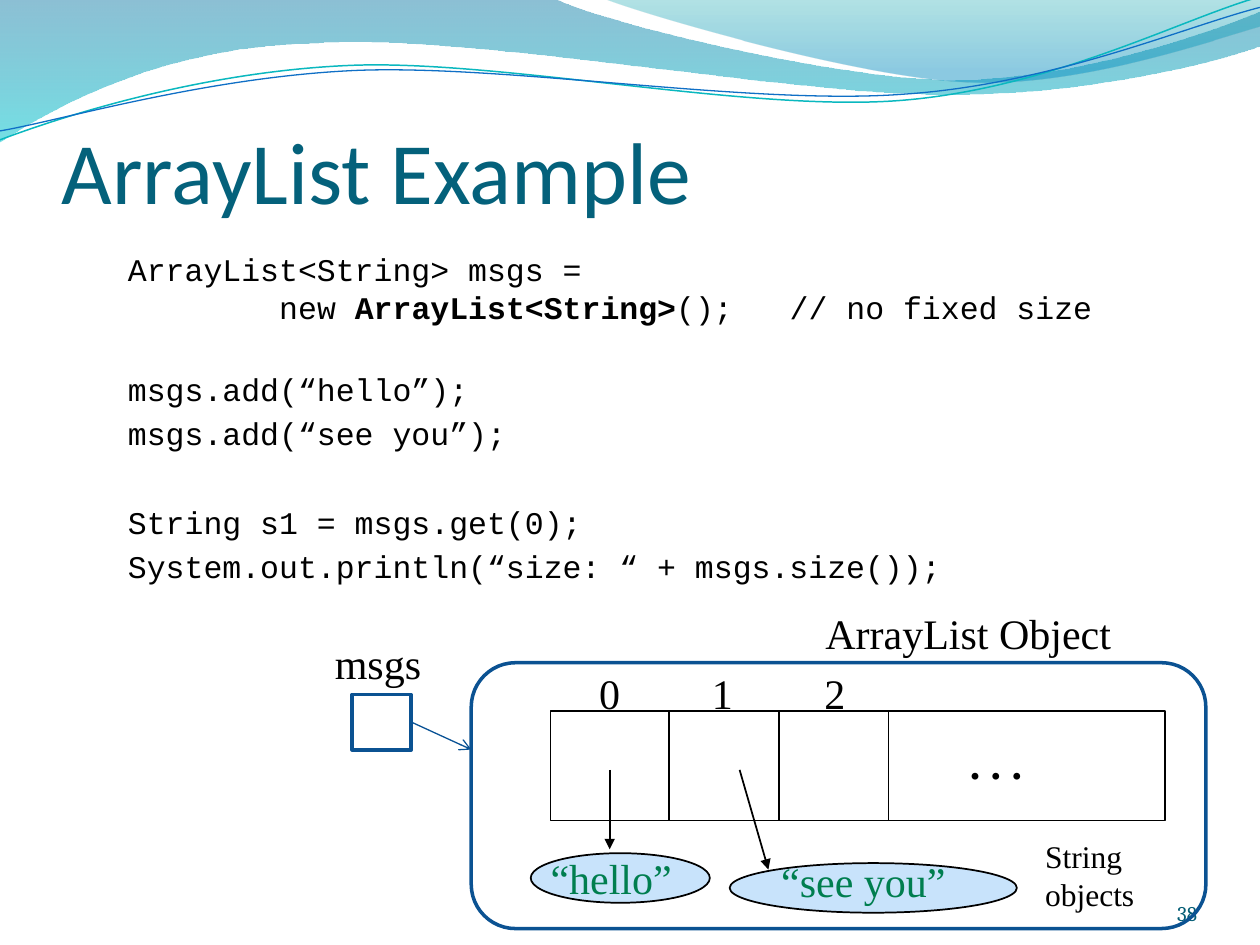
from lxml import etree
from pptx import Presentation
from pptx import util as u
from pptx.dml.color import RGBColor
from pptx.enum import shapes, text
from pptx.oxml.ns import qn

BLACK = RGBColor(0x00, 0x00, 0x00)
TITLE_TEAL = RGBColor(0x04, 0x61, 0x7B)
NUMBER_TEAL = RGBColor(0x04, 0x5D, 0x75)
STRING_GREEN = RGBColor(0x00, 0x7E, 0x4F)
OBJECT_BLUE = RGBColor(0x0B, 0x52, 0x92)
POINTER_BLUE = RGBColor(0x09, 0x52, 0x95)
OVAL_BLUE = RGBColor(0xC8, 0xE3, 0xFB)
WAVE_BLUE = RGBColor(0x00, 0x74, 0xA1)
WAVE_CYAN = RGBColor(0x00, 0xC6, 0xCF)
CREST_TEAL = RGBColor(0x00, 0xA1, 0xA9)
CREST_BLUE = RGBColor(0x00, 0x8B, 0xBF)
LINE_CYAN = RGBColor(0x0A, 0xB8, 0xBF)
LINE_BLUE = RGBColor(0x0F, 0x6F, 0xC6)

SERIF = "Times New Roman"
MONO = "Courier New"

BAND = [[(0, 0)], [(11.18, -0.03)],
        [(12.09, 0.43), (16.87, 1.6), (19.25, 1.6)],
        [(21.67, 1.6), (24.33, 0.66), (25.4, 0.23)],
        [(25.43, 0.91)],
        [(24.97, 1.12), (22.1, 1.93), (18.95, 1.9)],
        [(15.8, 1.9), (9.7, 0.71), (6.53, 0.86)],
        [(3.28, 0.91), (1.17, 2.11), (-0.03, 2.87)]]
CREST = [[(12.17, -0.03)],
         [(12.93, 0.28), (17.32, 1.57), (19.53, 1.65)],
         [(21.74, 1.75), (24.41, 0.81), (25.4, 0.53)],
         [(25.4, 0)]]
CYAN_CURVE = [[(0, 2.82)],
              [(1.22, 2.36), (4.01, 1.45), (7.04, 1.32)],
              [(10.03, 1.19), (15.06, 2.26), (18.11, 2.03)],
              [(21.16, 1.8), (23.83, 0.38), (25.35, -0.05)]]
BLUE_CURVE = [[(0, 2.64)],
              [(1.19, 2.44), (4.17, 1.55), (7.19, 1.42)],
              [(10.24, 1.3), (15.16, 2.13), (18.21, 1.9)],
              [(21.23, 1.7), (23.9, 0.53), (25.4, 0.15)]]


def bend(shape, segments):
    nodes = iter(list(shape._element.iter(qn("a:lnTo"))))
    for segment in segments:
        first, *others = [next(nodes) for _ in segment]
        if others:
            first.tag = qn("a:cubicBezTo")
        for node in others:
            first.append(node[0])
            node.getparent().remove(node)


def add_wave(slide, outline, stops=(), line=None, width=0.75):
    points = [(u.Cm(x), u.Cm(y)) for segment in outline for x, y in segment]
    builder = slide.shapes.build_freeform(*points[0])
    builder.add_line_segments(points[1:], close=bool(stops))
    shape = builder.convert_to_shape()
    bend(shape, outline[1:])
    paint(shape, None, line, width)
    if stops:
        shape.fill.gradient()
        shape.fill.gradient_angle = 270
        for stop, (position, color, _) in zip(shape.fill.gradient_stops, stops):
            stop.position = position
            stop.color.rgb = color
        for node, (_, _, opacity) in zip(shape._element.iter(qn("a:srgbClr")), stops):
            etree.SubElement(node, qn("a:alpha"), val=str(opacity * 1000))


def paint(shape, fill, line, width):
    shape.shadow.inherit = False
    if fill is None:
        shape.fill.background()
    else:
        shape.fill.solid()
        shape.fill.fore_color.rgb = fill
    if line is None:
        shape.line.fill.background()
    else:
        shape.line.color.rgb = line
        shape.line.width = u.Pt(width)


def add_box(slide, kind, box, fill=None, line=BLACK, width=1):
    shape = slide.shapes.add_shape(kind, *map(u.Cm, box))
    paint(shape, fill, line, width)


def add_line(slide, start, end, color=BLACK, width=1, arrow=None):
    connector = slide.shapes.add_connector(shapes.MSO_CONNECTOR.STRAIGHT,
                                           *map(u.Cm, (*start, *end)))
    connector.line.color.rgb = color
    connector.line.width = u.Pt(width)
    if arrow:
        outline = connector._element.spPr.find(qn("a:ln"))
        etree.SubElement(outline, qn("a:tailEnd"), type=arrow)
    etree.SubElement(connector._element.spPr, qn("a:effectLst"))


def add_text(slide, box, paragraphs, font=SERIF, size=24, color=BLACK, bold=False,
             wrap=False, align=text.PP_ALIGN.LEFT, anchor=text.MSO_ANCHOR.TOP,
             margins=(0.25, 0.13, 0.25, 0.13), before=(), leading=None, tabs=()):
    frame = slide.shapes.add_textbox(*map(u.Cm, box)).text_frame
    frame.word_wrap = wrap
    frame.vertical_anchor = anchor
    (frame.margin_left, frame.margin_top,
     frame.margin_right, frame.margin_bottom) = map(u.Cm, margins)
    for index, content in enumerate(paragraphs):
        paragraph = frame.paragraphs[0] if index == 0 else frame.add_paragraph()
        paragraph.alignment = align
        paragraph.space_before = u.Pt(before[index] if before else 0)
        if leading:
            paragraph.line_spacing = u.Pt(leading)
        if tabs:
            stops = etree.SubElement(paragraph._p.get_or_add_pPr(), qn("a:tabLst"))
            for position in tabs:
                etree.SubElement(stops, qn("a:tab"), pos=str(u.Cm(position)), algn="l")
        runs = [(content, bold)] if isinstance(content, str) else content
        for words, heavy in runs:
            if words == "\n":
                paragraph.add_line_break()
                continue
            run = paragraph.add_run()
            run.text = words
            run.font.name = font
            run.font.size = u.Pt(size)
            run.font.bold = heavy
            run.font.color.rgb = color


def add_waves(slide):
    add_wave(slide, BAND, stops=[(0, WAVE_BLUE, 45), (1, WAVE_CYAN, 55)])
    add_wave(slide, CREST, stops=[(0, CREST_TEAL, 30), (0.8, CREST_BLUE, 45)])
    add_wave(slide, CYAN_CURVE, line=LINE_CYAN, width=0.85)
    add_wave(slide, BLUE_CURVE, line=LINE_BLUE)


def add_code(slide):
    declaration = [("ArrayList<String> msgs =", False), ("\n", False), ("\tnew ", False),
                   ("ArrayList<String>", True), ("();\t// no fixed size", False)]
    lines = [declaration, "msgs.add(“hello”);", "msgs.add(“see you”);",
             "String s1 = msgs.get(0);", "System.out.println(“size: “ + msgs.size());"]
    add_text(slide, (2.33, 4.93, 21.59, 7.59), lines, font=MONO, size=18, wrap=True,
             before=(0, 25.5, 4, 29.5, 4), leading=21.3, tabs=(3.05, 13.34))


def add_array(slide):
    kinds = shapes.MSO_SHAPE
    left, top, cell, pitch = 13.49, 14.33, 2.21, 2.27
    add_box(slide, kinds.RECTANGLE, (11.1, top, 12.39, cell))
    for index in range(3):
        divider = left + index * cell
        add_line(slide, (divider, top), (divider, top + cell))
        add_text(slide, (11.83 + index * pitch, 13.33, 0.94, 1.27), [str(index)])
    add_text(slide, (19.3, 14.73, 1.57, 1.27), [". . ."], bold=True)

    add_box(slide, kinds.OVAL, (10.7, 17.2, 3.61, 1), fill=OVAL_BLUE)
    add_box(slide, kinds.OVAL, (14.71, 17.4, 5.79, 1), fill=OVAL_BLUE)
    add_text(slide, (10.85, 17.06, 2.95, 1.27), ["“hello”"], color=STRING_GREEN)
    add_text(slide, (15.5, 17.12, 4.06, 1.27), ["“see you”"], color=STRING_GREEN, wrap=True)
    add_line(slide, (12.29, 15.52), (12.29, 17.12), arrow="triangle")
    add_line(slide, (14.91, 15.52), (15.49, 17.53), arrow="triangle")
    add_text(slide, (20.82, 16.75, 2.34, 1.8), ["String", "objects"], size=18)


def add_reference(slide):
    kinds = shapes.MSO_SHAPE
    add_box(slide, kinds.ROUNDED_RECTANGLE, (9.5, 13.36, 14.81, 5.36),
            line=OBJECT_BLUE, width=2)
    add_box(slide, kinds.RECTANGLE, (7.1, 14, 1.19, 1.12), line=OBJECT_BLUE, width=2)
    add_line(slide, (8.3, 14.56), (9.5, 15.11), color=POINTER_BLUE, width=0.75, arrow="arrow")
    add_text(slide, (6.5, 12.73, 2.26, 1.27), ["msgs"])
    add_text(slide, (16.39, 12.12, 6.32, 1.27), ["ArrayList Object"])


def main():
    presentation = Presentation()
    presentation.slide_width = u.Cm(25.4)
    presentation.slide_height = u.Cm(19.05)
    slide = presentation.slides.add_slide(presentation.slide_layouts[6])
    add_waves(slide)
    add_text(slide, (1.25, 1.3, 22.86, 3.18), ["ArrayList Example"], font="Calibri", size=50,
             color=TITLE_TEAL, wrap=True, anchor=text.MSO_ANCHOR.BOTTOM,
             margins=(0, 0.13, 0, 0))
    add_code(slide)
    add_array(slide)
    add_text(slide, (22.02, 17.65, 2.11, 1.02), ["38"], font="Cambria", size=12,
             color=NUMBER_TEAL, wrap=True, align=text.PP_ALIGN.RIGHT,
             anchor=text.MSO_ANCHOR.BOTTOM, margins=(0, 0, 0, 0))
    add_reference(slide)
    presentation.save("out.pptx")


if __name__ == "__main__":
    main()
